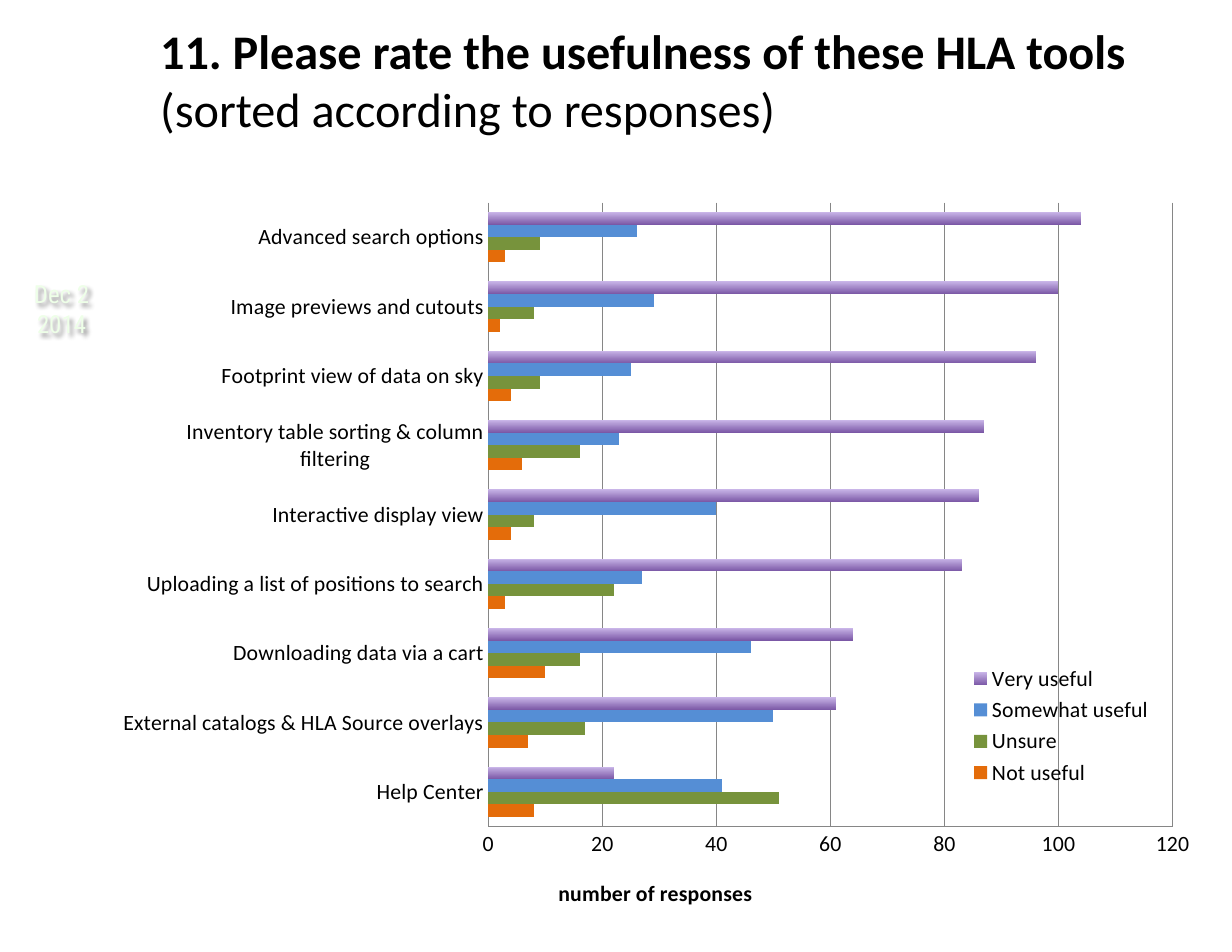
from lxml import etree
from pptx import Presentation
from pptx.chart.data import CategoryChartData
from pptx.dml.color import RGBColor
from pptx.enum.chart import XL_CHART_TYPE, XL_LEGEND_POSITION, XL_TICK_MARK
from pptx.enum.text import MSO_ANCHOR, PP_ALIGN
from pptx.oxml import parse_xml
from pptx.oxml.ns import nsdecls, qn
from pptx.util import Inches, Pt

BAR_CLUSTERED = XL_CHART_TYPE.BAR_CLUSTERED
LEGEND_RIGHT = XL_LEGEND_POSITION.RIGHT
NO_TICK = XL_TICK_MARK.NONE
MIDDLE = MSO_ANCHOR.MIDDLE
LEFT, CENTER = PP_ALIGN.LEFT, PP_ALIGN.CENTER

TOOLS = [
    "Help Center",
    "External catalogs & HLA Source overlays",
    "Downloading data via a cart",
    "Uploading a list of positions to search",
    "Interactive display view",
    "Inventory table sorting & column filtering",
    "Footprint view of data on sky",
    "Image previews and cutouts",
    "Advanced search options",
]
# Rating, responses per tool, gradient stops from bottom to top or one solid colour
RATINGS = [
    ("Not useful", (8, 7, 10, 3, 4, 6, 4, 2, 3), ["E46C0A"]),
    ("Unsure", (51, 17, 16, 22, 8, 16, 9, 8, 9), ["77933C"]),
    ("Somewhat useful", (41, 50, 46, 27, 40, 23, 25, 29, 26), ["558ED5"]),
    ("Very useful", (22, 61, 64, 83, 86, 87, 96, 100, 104), ["7B58A6", "C9B5E8"]),
]
GRID_COLOR = "868686"
CHART_WIDTH, CHART_HEIGHT = Inches(9.93), Inches(6.62)


def rgb(value):
    return RGBColor.from_string(value)


def style_font(font, size, color="000000", name="Calibri", bold=False):
    font.size = Pt(size)
    font.name = name
    font.bold = bold
    font.color.rgb = rgb(color)


def add_run(paragraph, text, size, **style):
    run = paragraph.add_run()
    run.text = text
    style_font(run.font, size, **style)


def set_insets(frame):
    frame.word_wrap = True
    frame.margin_left = frame.margin_right = Inches(0.11)
    frame.margin_top = frame.margin_bottom = Inches(0.06)


def add_shadow(shape):
    """Shadow an unfilled shape, so that the shadow falls from its text."""
    shape._element.spPr.append(parse_xml(
        f'<a:effectLst {nsdecls("a")}><a:outerShdw blurRad="38100" dist="38100" '
        'dir="2700000" algn="tl"><a:srgbClr val="000000"><a:alpha val="43000"/>'
        '</a:srgbClr></a:outerShdw></a:effectLst>'))


def add_date(slide):
    box = slide.shapes.add_textbox(Inches(0.03), Inches(2.43), Inches(1.04), Inches(0.65))
    add_shadow(box)
    set_insets(box.text_frame)
    paragraph = box.text_frame.paragraphs[0]
    paragraph.alignment = CENTER
    add_run(paragraph, "Dec 2 2014", 16, color="EEFFE8", name="Roboto Condensed")


def fill_title(slide):
    title = slide.shapes.title
    title.left, title.top = Inches(1.32), Inches(0)
    title.width, title.height = Inches(9.13), Inches(1.42)
    set_insets(title.text_frame)
    title.text_frame.vertical_anchor = MIDDLE
    paragraph = title.text_frame.paragraphs[0]
    paragraph.alignment = LEFT
    add_run(paragraph, "11. Please rate the usefulness of these HLA tools ", 31, bold=True)
    add_run(paragraph, "(sorted according to responses)", 31)


def set_layout(element, after, left, top, width=None, height=None, inner=False):
    """Place a chart part within the chart area, after the named child if any."""
    for old in element.findall(qn("c:layout")):
        element.remove(old)
    layout = etree.Element(qn("c:layout"))
    manual = etree.SubElement(layout, qn("c:manualLayout"))
    settings = [("layoutTarget", "inner" if inner else None),
                ("xMode", "edge"), ("yMode", "edge"),
                ("x", left / CHART_WIDTH), ("y", top / CHART_HEIGHT),
                ("w", width and width / CHART_WIDTH),
                ("h", height and height / CHART_HEIGHT)]
    for tag, value in settings:
        if value is not None:
            etree.SubElement(manual, qn(f"c:{tag}")).set("val", str(value))
    if after:
        element.find(qn(after)).addnext(layout)
    else:
        element.insert(0, layout)


def style_axis(axis):
    axis.major_tick_mark = axis.minor_tick_mark = NO_TICK
    axis.format.line.color.rgb = rgb(GRID_COLOR)
    style_font(axis.tick_labels.font, 14)


def style_value_axis(axis):
    style_axis(axis)
    axis.minimum_scale, axis.maximum_scale, axis.major_unit = 0, 120, 20
    axis.has_major_gridlines = True
    axis.major_gridlines.format.line.color.rgb = rgb(GRID_COLOR)
    axis.has_title = True
    paragraph = axis.axis_title.text_frame.paragraphs[0]
    add_run(paragraph, "number of responses", 14, bold=True)
    set_layout(axis.axis_title._element, "c:tx", Inches(3.88), Inches(6.22))


def fill_series(series, colors):
    fill = series.format.fill
    if len(colors) == 1:
        fill.solid()
        fill.fore_color.rgb = rgb(colors[0])
    else:
        fill.gradient()
        fill.gradient_angle = 90
        for stop, color in zip(fill.gradient_stops, colors):
            stop.color.rgb = rgb(color)


def add_legend(chart):
    chart.has_legend = True
    chart.legend.position = LEGEND_RIGHT
    chart.legend.include_in_layout = False
    style_font(chart.legend.font, 14)
    set_layout(chart.legend._element, "c:legendPos",
               Inches(7.46), Inches(4.32), Inches(1.89), Inches(1.16))


def add_ratings_chart(slide):
    data = CategoryChartData()
    data.categories = TOOLS
    for name, values, _ in RATINGS:
        data.add_series(name, values)
    chart = slide.shapes.add_chart(BAR_CLUSTERED, Inches(1.07), Inches(1.58),
                                   CHART_WIDTH, CHART_HEIGHT, data).chart
    chart.has_title = False
    style_font(chart.font, 10)
    plot = chart.plots[0]
    plot.gap_width = 150
    plot.vary_by_categories = False
    for series, (_, _, colors) in zip(plot.series, RATINGS):
        fill_series(series, colors)
    style_axis(chart.category_axis)
    style_value_axis(chart.value_axis)
    add_legend(chart)
    set_layout(chart._chartSpace.chart.plotArea, None, Inches(3.29), Inches(0.23),
               Inches(6.11), Inches(5.57), inner=True)


def main():
    presentation = Presentation()
    presentation.slide_width, presentation.slide_height = Inches(11), Inches(8.5)
    slide = presentation.slides.add_slide(presentation.slide_layouts[5])
    add_date(slide)
    fill_title(slide)
    add_ratings_chart(slide)
    presentation.save("out.pptx")


if __name__ == "__main__":
    main()
